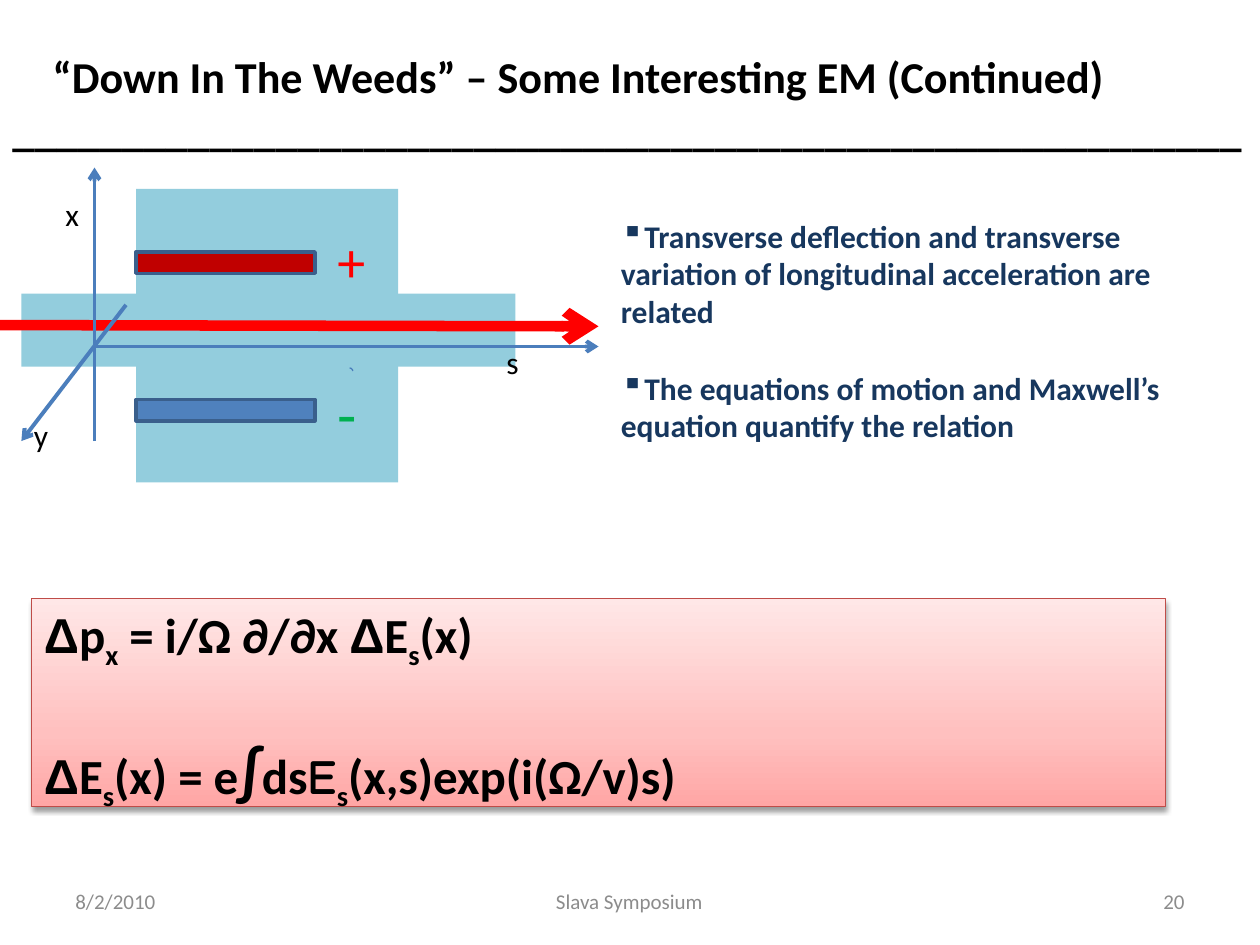
from lxml import etree
from pptx import Presentation
from pptx.dml.color import RGBColor
from pptx.enum.shapes import MSO_CONNECTOR, MSO_SHAPE
from pptx.enum.text import MSO_ANCHOR, PP_ALIGN
from pptx.oxml import parse_xml
from pptx.oxml.ns import nsdecls, qn
from pptx.util import Pt

PX = 9144
STRAIGHT = MSO_CONNECTOR.STRAIGHT
RECTANGLE, ARC = MSO_SHAPE.RECTANGLE, MSO_SHAPE.ARC
TOP, MIDDLE = MSO_ANCHOR.TOP, MSO_ANCHOR.MIDDLE
LEFT, CENTER, RIGHT = PP_ALIGN.LEFT, PP_ALIGN.CENTER, PP_ALIGN.RIGHT
BLACK, GRAY, NAVY, RED, GREEN = "000000", "8C8C8C", "17375E", "FF0000", "00B050"
CAVITY, AXIS, PLATE_EDGE = "93CDDD", "4B7EBC", "3A5F8C"

GREEK = {"name": "Arial"}
SUB = {"baseline": -25000}
EQUATIONS = [
    [("Δ", GREEK), ("p", {}), ("x", SUB), (" = i/Ω ∂/∂x ", {}),
     ("Δ", GREEK), ("E", {}), ("s", SUB), ("(x)", {})],
    [("Δ", GREEK), ("E", {}), ("s", SUB), ("(x) = e", {}), ("∫", {"size": 36}),
     ("ds", {}), ("E", {"name": "Comic Neue"}), ("s", SUB), ("(x,s)exp(i(Ω/v)s)", {})],
]


def color(value):
    return RGBColor.from_string(value)


def emu(*lengths):
    return [length * PX for length in lengths]


def style_font(font, size, ink, bold=False, name="Calibri"):
    font.name = name
    font.size = Pt(size)
    font.bold = bold
    font.color.rgb = color(ink)


def add_text(page, box, lines, size, ink, bold=False, align=LEFT, anchor=TOP, wrap=True):
    frame = page.shapes.add_textbox(*emu(*box)).text_frame
    frame.word_wrap = wrap
    frame.vertical_anchor = anchor
    for index, line in enumerate(lines):
        para = frame.paragraphs[0] if index == 0 else frame.add_paragraph()
        para.text = line
        para.alignment = align
        style_font(para.font, size, ink, bold)
    return frame


def add_block(shapes, box, fill=None, line=None, width=1, kind=RECTANGLE):
    block = shapes.add_shape(kind, *emu(*box))
    block.shadow.inherit = False
    if fill:
        block.fill.solid()
        block.fill.fore_color.rgb = color(fill)
    else:
        block.fill.background()
    if line:
        block.line.color.rgb = color(line)
        block.line.width = Pt(width)
    else:
        block.line.fill.background()
    return block


def add_arrow(page, start, end, ink, width):
    arrow = page.shapes.add_connector(STRAIGHT, *emu(*start, *end))
    arrow.line.color.rgb = color(ink)
    arrow.line.width = Pt(width)
    etree.SubElement(arrow.line._get_or_add_ln(), qn("a:tailEnd"), type="arrow")
    etree.SubElement(arrow._element.spPr, qn("a:effectLst"))


def add_title(page, box):
    lines = ["“Down In The Weeds” – Some Interesting EM (Continued)", "_" * 56]
    frame = add_text(page, box, lines, 25.2, BLACK, True, anchor=MIDDLE)
    frame.paragraphs[0]._p.get_or_add_pPr().set("marL", str(32 * PX))


def add_cavity(page, box):
    left, top, width, height = box
    middle = left + width // 2
    body = page.shapes.add_group_shape().shapes
    add_block(body, (left, top + 83, width, 58), CAVITY)
    add_block(body, (middle - 105, top, 208, height), CAVITY)
    for offset, fill in ((50, "C00000"), (167, "4F81BD")):
        add_block(page.shapes, (middle - 105, top + offset, 142, 17), fill, PLATE_EDGE, 2)
    add_arrow(page, (left - 17, top + 108), (left + 458, top + 109), RED, 6)
    add_block(page.shapes, (left + 258, top + 142, 5, 5), line=AXIS, width=0.75, kind=ARC)
    add_text(page, (left + 241, top + 25, 43, 64), ["+"], 32, RED, wrap=False)
    add_text(page, (left + 241, top + 142, 36, 71), ["-"], 36, GREEN, wrap=False)


def add_axes(page, box):
    left, top, width, height = box
    right, bottom = left + width, top + height
    origin = left + 58, top + 142
    axes = [
        ((origin[0], bottom), (origin[0], top)),
        (origin, (right, origin[1])),
        ((origin[0] + 25, origin[1] - 33), (left, bottom)),
    ]
    for start, end in axes:
        add_arrow(page, start, end, AXIS, 2.25)
    labels = [("s", left + 375, top + 134), ("y", left, top + 192), ("x", left + 25, top + 17)]
    for label, label_left, label_top in labels:
        add_text(page, (label_left, label_top, 31, 40), [label], 18, BLACK, wrap=False)


def add_findings(page, box):
    lines = [
        "Transverse deflection and transverse variation of longitudinal acceleration are related",
        "The equations of motion and Maxwell’s equation quantify the relation",
    ]
    frame = add_text(page, box, lines, 18, NAVY, True)
    frame.paragraphs[1].space_before = Pt(22)
    for para in frame.paragraphs:
        properties = para._p.get_or_add_pPr()
        properties.set("marL", "0")
        properties.set("indent", "0")
        bullet = parse_xml(f'<a:buChar {nsdecls("a")} char="▪"/>')
        properties.insert_element_before(bullet, "a:tabLst", "a:defRPr", "a:extLst")


def add_equations(page, box):
    panel = add_block(page.shapes, box, "FFC0BF", "BF4C48", 0.75)
    properties = panel._element.spPr
    stops = "".join(
        f'<a:gs pos="{place * 1000}"><a:srgbClr val="{ink}"/></a:gs>'
        for place, ink in ((0, "FFA6A5"), (35, "FFC0BF"), (100, "FFE7E7"))
    )
    gradient = parse_xml(
        f'<a:gradFill {nsdecls("a")} rotWithShape="1"><a:gsLst>{stops}</a:gsLst>'
        '<a:lin ang="16200000" scaled="0"/></a:gradFill>'
    )
    properties.replace(properties.find(qn("a:solidFill")), gradient)
    shadow = parse_xml(
        f'<a:effectLst {nsdecls("a")}><a:outerShdw blurRad="40000" dist="20000" dir="5400000" '
        'rotWithShape="0"><a:srgbClr val="000000"><a:alpha val="38000"/></a:srgbClr>'
        '</a:outerShdw></a:effectLst>'
    )
    properties.replace(properties.find(qn("a:effectLst")), shadow)

    frame = panel.text_frame
    frame.word_wrap = True
    frame.vertical_anchor = TOP
    for index, equation in enumerate(EQUATIONS):
        para = frame.paragraphs[0] if index == 0 else frame.add_paragraph()
        para.alignment = LEFT
        para.space_before = Pt(34 * index)
        for text, style in equation:
            span = para.add_run()
            span.text = text
            style_font(span.font, style.get("size", 28), BLACK, True, style.get("name", "Calibri"))
            if "baseline" in style:
                span._r.get_or_add_rPr().set("baseline", str(style["baseline"]))


def add_footer(page, box):
    left, top, width, height = box
    parts = [
        ("8/2/2010", left, 233, LEFT),
        ("20", left + width - 233, 233, RIGHT),
        ("Slava Symposium", left + (width - 317) // 2, 317, CENTER),
    ]
    for text, part_left, part_width, align in parts:
        add_text(page, (part_left, top, part_width, height), [text], 12, GRAY,
                 align=align, anchor=MIDDLE)


def main():
    deck = Presentation()
    deck.slide_width, deck.slide_height = emu(1000, 750)
    page = deck.slides.add_slide(deck.slide_layouts[6])
    add_title(page, (0, 30, 1000, 103))
    add_cavity(page, (17, 150, 392, 233))
    add_findings(page, (483, 167, 500, 192))
    add_equations(page, (25, 475, 900, 165))
    add_axes(page, (17, 133, 458, 217))
    add_footer(page, (50, 695, 900, 40))
    deck.save("out.pptx")


if __name__ == "__main__":
    main()
